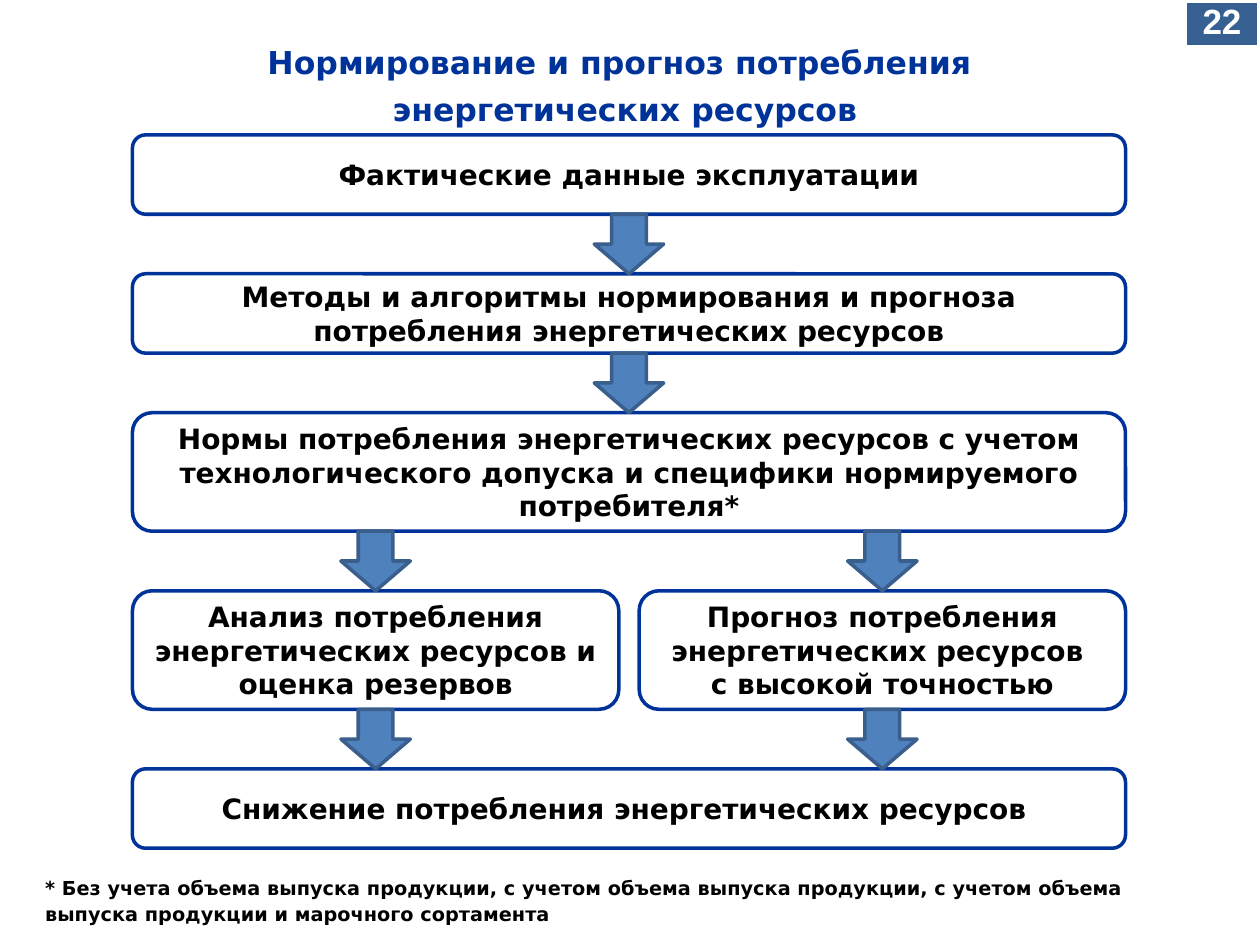
from dataclasses import dataclass

from pptx import Presentation
from pptx.dml.color import RGBColor
from pptx.enum.shapes import MSO_SHAPE
from pptx.enum.text import MSO_ANCHOR, PP_ALIGN
from pptx.util import Cm, Pt


@dataclass(frozen=True)
class Theme:
    font: str = "DejaVu Sans"
    plain: str = "Arial"
    navy: str = "003399"
    white: str = "FFFFFF"
    black: str = "000000"
    badge: str = "376092"
    arrow: str = "4F81BD"
    edge: str = "3A5F8C"
    head: int = 18
    body: int = 16
    note: int = 11
    num: int = 20


T = Theme()
GAP = 1.2  # height of an arrow between two rows


def put(shape, text, size=T.body, color=T.black, font=T.font,
        align=PP_ALIGN.CENTER, anchor=MSO_ANCHOR.MIDDLE, lead=None):
    """Write bold text into a shape; a line feed starts a new line."""
    frame = shape.text_frame
    frame.word_wrap = True
    frame.vertical_anchor = anchor
    para = frame.paragraphs[0]
    para.alignment = align
    if lead:
        para.line_spacing = lead
    for i, line in enumerate(text.split("\n")):
        if i:
            para.add_line_break()
        run = para.add_run()
        run.text = line
        run.font.name = font
        run.font.size = Pt(size)
        run.font.bold = True
        run.font.color.rgb = RGBColor.from_string(color)


def draw(slide, kind, box, fill, line, width=2):
    """Add a flat preset shape; box is left, top, width, height in cm."""
    shape = slide.shapes.add_shape(kind, *map(Cm, box))
    shape.shadow.inherit = False
    shape.fill.solid()
    shape.fill.fore_color.rgb = RGBColor.from_string(fill)
    shape.line.color.rgb = RGBColor.from_string(line)
    shape.line.width = Pt(width)
    return shape


def title(slide, box, text):
    shape = slide.shapes.title
    shape.left, shape.top, shape.width, shape.height = map(Cm, box)
    put(shape, text, size=T.head, color=T.navy, lead=Pt(27))


def badge(slide, box, text):
    shape = draw(slide, MSO_SHAPE.RECTANGLE, box, T.badge, T.white, 1.5)
    frame = shape.text_frame
    frame.margin_left = frame.margin_right = 0
    put(shape, text, size=T.num, color=T.white, font=T.plain, lead=0.8)


def note(slide, box, text):
    shape = slide.shapes.add_textbox(*map(Cm, box))
    put(shape, text, size=T.note, align=PP_ALIGN.LEFT,
        anchor=MSO_ANCHOR.TOP, lead=Pt(15))


def flow(slide, box, rows):
    """Stack rows of equal steps, joined by down arrows."""
    left, top, width = box
    split, wide = 0.41, 1.4
    mids = []
    for i, (high, steps) in enumerate(rows):
        count = len(steps)
        span = (width - split * (count - 1)) / count
        last, mids = mids, []
        for j, text in enumerate(steps):
            x = left + j * (span + split)
            step = draw(slide, MSO_SHAPE.ROUNDED_RECTANGLE,
                        (x, top, span, high), T.white, T.navy)
            put(step, text)
            mids.append(x + span / 2)
        # Arrows follow the finer of the two rows they join
        if i:
            for mid in max(last, mids, key=len):
                draw(slide, MSO_SHAPE.DOWN_ARROW,
                     (mid - wide / 2, top - GAP, wide, GAP), T.arrow, T.edge)
        top += high + GAP


def main():
    deck = Presentation()
    deck.slide_width, deck.slide_height = Cm(25.4), Cm(19.05)
    slide = deck.slides.add_slide(deck.slide_layouts[5])

    # Heading and page number
    title(slide, (0.5, 0.53, 24.2, 2.2),
          "Нормирование и прогноз потребления \nэнергетических ресурсов")
    badge(slide, (23.9, 0.03, 1.47, 0.91), "22")

    # Chain of steps
    low, tall = 1.6, 2.39
    flow(slide, (2.67, 2.72, 20.02), [
        (low, ["Фактические данные эксплуатации"]),
        (low, ["Методы и алгоритмы нормирования и прогноза "
               "потребления энергетических ресурсов"]),
        (tall, ["Нормы потребления энергетических ресурсов с учетом "
                "технологического допуска и специфики нормируемого "
                "потребителя*"]),
        (tall, ["Анализ потребления энергетических ресурсов и "
                "оценка резервов",
                "Прогноз потребления энергетических ресурсов \n"
                "с высокой точностью"]),
        (low, ["Снижение потребления энергетических ресурсов "]),
    ])

    # Footnote
    note(slide, (0.66, 17.48, 24, 1.27),
         "* Без учета объема выпуска продукции, с учетом объема выпуска "
         "продукции, с учетом объема выпуска продукции и марочного сортамента")

    deck.save("out.pptx")


if __name__ == "__main__":
    main()
